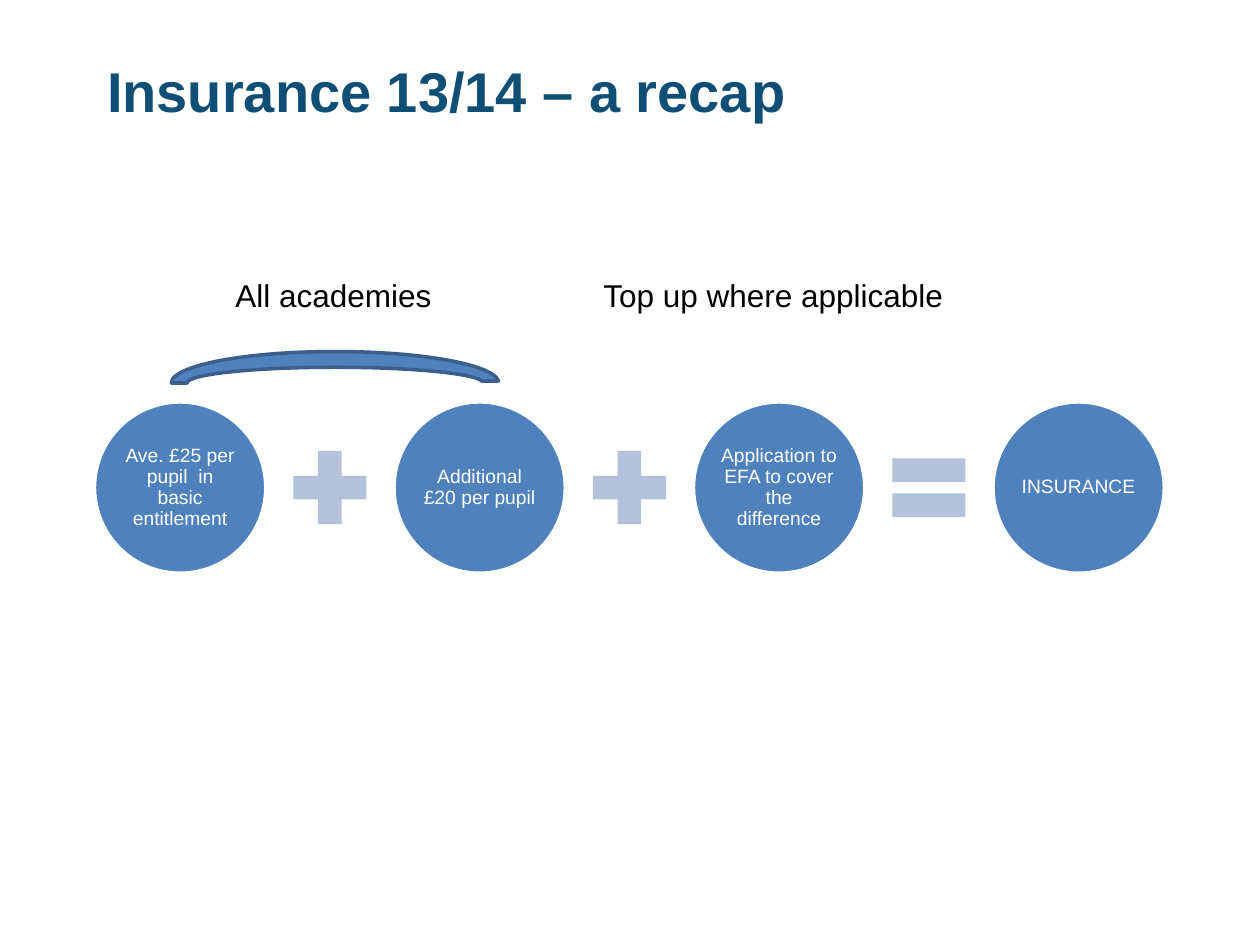
from pptx import Presentation
from pptx.dml.color import RGBColor
from pptx.enum.shapes import MSO_SHAPE as SHAPE
from pptx.enum.text import MSO_ANCHOR as ANCHOR, MSO_AUTO_SIZE as AUTO, PP_ALIGN as ALIGN
from pptx.util import Inches, Pt

COLORS = {"title": "104F75", "circle": "4F81BD", "sign": "B3C1DB",
          "arc_line": "3A5F8C", "white": "FFFFFF", "black": "000000"}


def set_text(tf, text, size, color, bold=False, align=ALIGN.LEFT, anchor=ANCHOR.TOP,
             margin=None, spacing=None):
    tf.vertical_anchor = anchor
    if margin is not None:
        tf.margin_left = tf.margin_right = tf.margin_top = tf.margin_bottom = Inches(margin)
    p = tf.paragraphs[0]
    p.alignment = align
    p.line_spacing = spacing
    r = p.add_run()
    r.text = text
    r.font.name = "Arial"
    r.font.size = Pt(size)
    r.font.bold = bold
    r.font.color.rgb = RGBColor.from_string(COLORS[color])


def add_shape(kind, x, y, w, h, fill, line=None):
    sp = s.shapes.add_shape(kind, Inches(x), Inches(y), Inches(w), Inches(h))
    sp.shadow.inherit = False
    sp.fill.solid()
    sp.fill.fore_color.rgb = RGBColor.from_string(COLORS[fill])
    if line:
        sp.line.color.rgb = RGBColor.from_string(COLORS[line])
        sp.line.width = Pt(2)
    else:
        sp.line.fill.background()
    return sp


prs = Presentation()
prs.slide_width, prs.slide_height = Inches(10), Inches(7.5)
s = prs.slides.add_slide(prs.slide_layouts[5])

title = s.shapes.title
title.left, title.top = Inches(0.75), Inches(0.36)
title.width, title.height = Inches(8.5), Inches(0.71)
set_text(title.text_frame, "Insurance 13/14 – a recap", 32, "title", bold=True,
         anchor=ANCHOR.MIDDLE)

# Equation: circles at an equal pitch, a sign centred in each gap
left, pitch, diameter, sign_size, middle = 0.75, 2.377, 1.36, 0.79, 3.87
terms = ["Ave. £25 per pupil  in basic entitlement", "Additional £20 per pupil",
         "Application to EFA to cover the difference", "INSURANCE"]
signs = [SHAPE.MATH_PLUS, SHAPE.MATH_PLUS, SHAPE.MATH_EQUAL]

for i, term in enumerate(terms):
    x = left + i * pitch
    circle = add_shape(SHAPE.OVAL, x, middle - diameter / 2, diameter, diameter,
                       "circle", "white")
    circle.text_frame.word_wrap = True
    set_text(circle.text_frame, term, 11, "white", align=ALIGN.CENTER,
             anchor=ANCHOR.MIDDLE, margin=0.02, spacing=0.9)
    if i < len(signs):
        sign_x = x + (diameter + pitch - sign_size) / 2
        add_shape(signs[i], sign_x, middle - sign_size / 2, sign_size, sign_size, "sign")

# Arc over the two terms that apply to all academies
arc = add_shape(SHAPE.BLOCK_ARC, 1.36, 2.79, 2.6, 0.5, "circle", "arc_line")
for i, value in enumerate([108, 215.575, 0.25]):
    arc.adjustments[i] = value

for label, x, w in [("All academies", 1.77, 1.77), ("Top up where applicable", 4.69, 2.92)]:
    box = s.shapes.add_textbox(Inches(x), Inches(2.14), Inches(w), Inches(0.4))
    box.text_frame.word_wrap = False
    box.text_frame.auto_size = AUTO.SHAPE_TO_FIT_TEXT
    set_text(box.text_frame, label, 18, "black")

prs.save("out.pptx")
